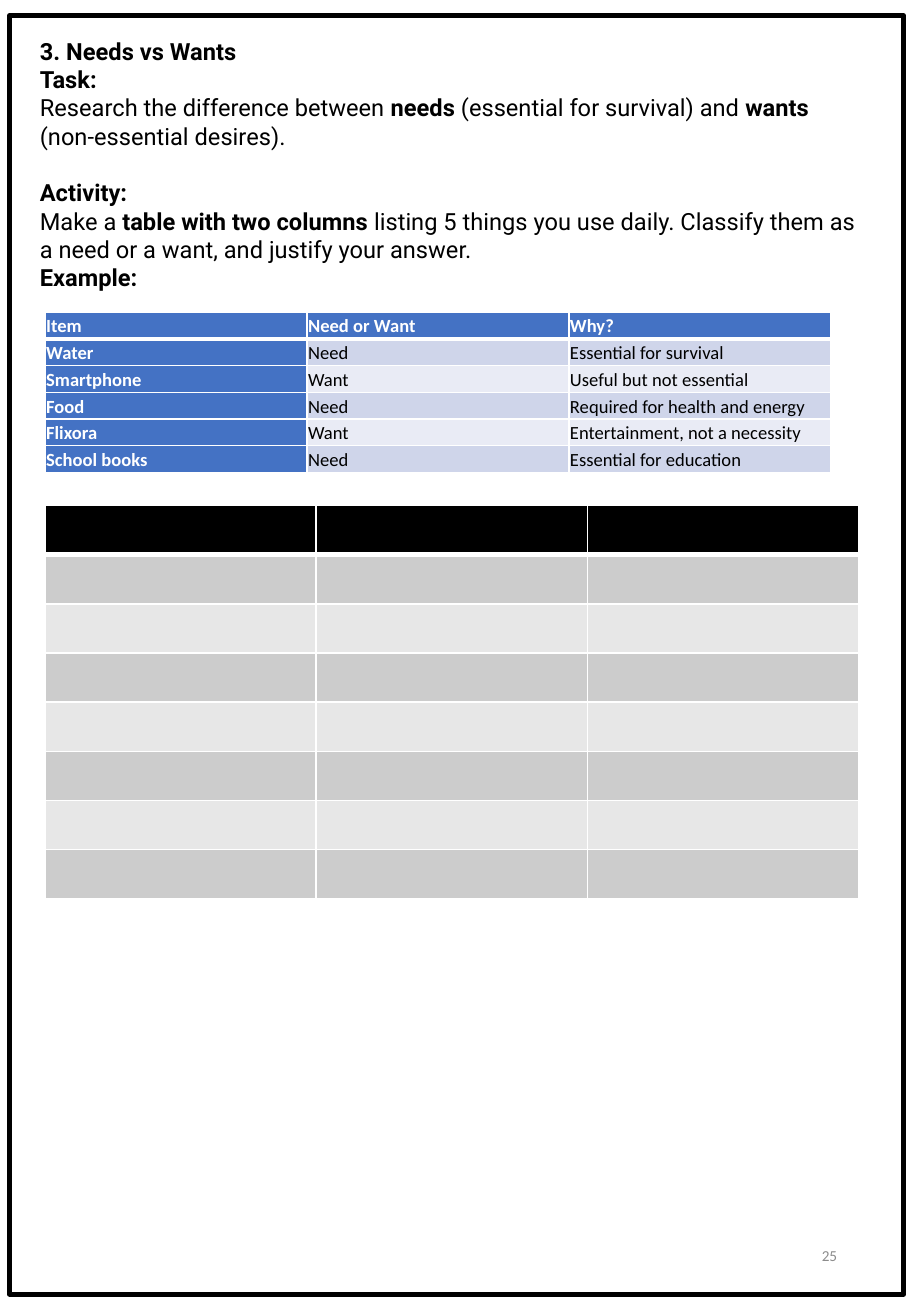
import dataclasses

import lxml.etree
import pptx
import pptx.dml.color
import pptx.enum.shapes
import pptx.enum.text
import pptx.oxml.ns
import pptx.util

Inches = pptx.util.Inches
Pt = pptx.util.Pt


@dataclasses.dataclass(frozen=True)
class Theme:
    heading_font: str = "Roboto"
    body_font: str = "Calibri"
    brief_size: float = 14
    table_size: float = 11
    number_size: float = 9
    black: str = "000000"
    white: str = "FFFFFF"
    blue: str = "4472C4"
    number_gray: str = "8C8C8C"
    blue_bands: tuple[str, str] = ("CFD5EA", "E9EBF5")
    gray_bands: tuple[str, str] = ("CCCCCC", "E7E7E7")
    grid_line: float = 1
    header_line: float = 3


@dataclasses.dataclass(frozen=True)
class Box:
    left: float
    top: float
    width: float
    height: float

    def lengths(self) -> list[pptx.util.Length]:
        return [Inches(side) for side in dataclasses.astuple(self)]


@dataclasses.dataclass(frozen=True)
class Span:
    text: str
    bold: bool = False


@dataclasses.dataclass(frozen=True)
class Para:
    spans: tuple[Span, ...]
    space_before: float = 0


@dataclasses.dataclass(frozen=True)
class Grid:
    box: Box
    rows: list[tuple[str, ...]]
    header_fill: str
    bands: tuple[str, str]
    first_column: bool = False
    compact: bool = False


THEME = Theme()

BRIEF = [
    Para((Span("3. Needs vs Wants", True),)),
    Para((Span("Task:", True),)),
    Para((
        Span("Research the difference between "),
        Span("needs", True),
        Span(" (essential for survival) and "),
        Span("wants", True),
        Span(" (non-essential desires)."),
    )),
    Para((Span("Activity:", True),), space_before=16.8),
    Para((
        Span("Make a "),
        Span("table with two columns", True),
        Span(" listing 5 things you use daily. Classify them as a need or a want, and justify your answer."),
    )),
    Para((Span("Example:", True),)),
]

EXAMPLE = Grid(
    Box(0.37, 2.57, 6.47, 1.32),
    [
        ("Item", "Need or Want", "Why?"),
        ("Water", "Need", "Essential for survival"),
        ("Smartphone", "Want", "Useful but not essential"),
        ("Food", "Need", "Required for health and energy"),
        ("Flixora", "Want", "Entertainment, not a necessity"),
        ("School books", "Need", "Essential for education"),
    ],
    THEME.blue,
    THEME.blue_bands,
    first_column=True,
    compact=True,
)

ANSWERS = Grid(
    Box(0.37, 4.16, 6.7, 3.24),
    [("",) * 3] * 8,
    THEME.black,
    THEME.gray_bands,
)


def rgb(color: str) -> pptx.dml.color.RGBColor:
    return pptx.dml.color.RGBColor.from_string(color)


def format_run(run, font: str, size: float, color: str, bold: bool = False) -> None:
    run.font.name = font
    run.font.size = Pt(size)
    run.font.bold = bold
    run.font.color.rgb = rgb(color)


def add_frame(page, box: Box) -> None:
    frame = page.shapes.add_shape(pptx.enum.shapes.MSO_SHAPE.RECTANGLE, *box.lengths())
    frame.shadow.inherit = False
    frame.fill.solid()
    frame.fill.fore_color.rgb = rgb(THEME.white)
    frame.line.color.rgb = rgb(THEME.black)
    frame.line.width = Pt(3)


def add_text_frame(page, box: Box):
    text_frame = page.shapes.add_textbox(*box.lengths()).text_frame
    text_frame.word_wrap = True
    text_frame.vertical_anchor = pptx.enum.text.MSO_ANCHOR.MIDDLE
    return text_frame


def add_page_number(page, box: Box, number: str) -> None:
    text_frame = add_text_frame(page, box)
    text_frame.text = number
    paragraph = text_frame.paragraphs[0]
    paragraph.alignment = pptx.enum.text.PP_ALIGN.RIGHT
    format_run(paragraph.runs[0], THEME.body_font, THEME.number_size, THEME.number_gray)


def add_brief(page, box: Box, paras: list[Para]) -> None:
    text_frame = add_text_frame(page, box)
    for index, para in enumerate(paras):
        paragraph = text_frame.add_paragraph() if index else text_frame.paragraphs[0]
        paragraph.space_before = Pt(para.space_before)
        for span in para.spans:
            run = paragraph.add_run()
            run.text = span.text
            format_run(run, THEME.heading_font, THEME.brief_size, THEME.black, span.bold)


def set_borders(cell, top: float, bottom: float) -> None:
    properties = cell._tc.get_or_add_tcPr()
    widths = {"lnL": THEME.grid_line, "lnR": THEME.grid_line, "lnT": top, "lnB": bottom}
    for index, (side, width) in enumerate(widths.items()):
        line = lxml.etree.Element(pptx.oxml.ns.qn(f"a:{side}"), w=str(Pt(width)))
        fill = lxml.etree.SubElement(line, pptx.oxml.ns.qn("a:solidFill"))
        lxml.etree.SubElement(fill, pptx.oxml.ns.qn("a:srgbClr"), val=THEME.white)
        properties.insert(index, line)


def fill_cell(cell, grid: Grid, row: int, column: int) -> None:
    strong = row == 0 or (grid.first_column and column == 0)
    cell.fill.solid()
    cell.fill.fore_color.rgb = rgb(grid.header_fill if strong else grid.bands[(row - 1) % 2])
    set_borders(
        cell,
        THEME.header_line if row == 1 else THEME.grid_line,
        THEME.header_line if row == 0 else THEME.grid_line,
    )
    if grid.compact:
        cell.vertical_anchor = pptx.enum.text.MSO_ANCHOR.MIDDLE
        cell.margin_left = cell.margin_right = Inches(0.01)
        cell.margin_top = cell.margin_bottom = Inches(0.01)
    if grid.rows[row][column]:
        cell.text_frame.text = grid.rows[row][column]
        paragraph = cell.text_frame.paragraphs[0]
        paragraph.line_spacing = 1.07
        paragraph.space_after = Pt(8)
        color = THEME.white if strong else THEME.black
        format_run(paragraph.runs[0], THEME.body_font, THEME.table_size, color, strong)


def add_grid(page, grid: Grid) -> None:
    row_count, column_count = len(grid.rows), len(grid.rows[0])
    table = page.shapes.add_table(row_count, column_count, *grid.box.lengths()).table
    table.first_col = grid.first_column
    for row in range(row_count):
        for column in range(column_count):
            fill_cell(table.cell(row, column), grid, row, column)


def main() -> None:
    deck = pptx.Presentation()
    deck.slide_width, deck.slide_height = Inches(7.5), Inches(10.83)
    page = deck.slides.add_slide(deck.slide_layouts[6])
    add_frame(page, Box(0.08, 0.13, 7.36, 10.52))
    add_page_number(page, Box(5.3, 10.04, 1.69, 0.58), "25")
    add_grid(page, EXAMPLE)
    add_brief(page, Box(0.23, 0.24, 7, 2.22), BRIEF)
    add_grid(page, ANSWERS)
    deck.save("out.pptx")


if __name__ == "__main__":
    main()
